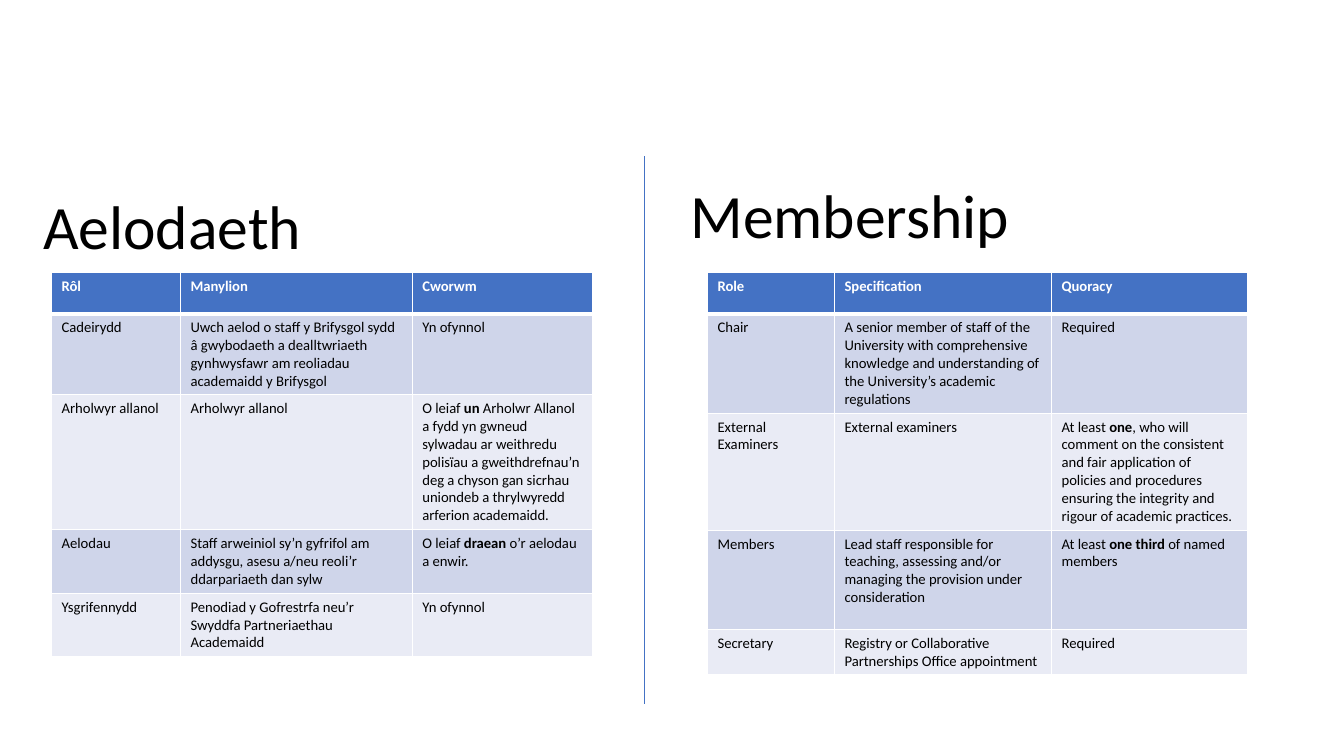
"""Build the bilingual membership slide with two role tables."""
from dataclasses import dataclass

from lxml.etree import SubElement
from pptx import Presentation
from pptx.dml.color import RGBColor
from pptx.enum.shapes import MSO_CONNECTOR
from pptx.enum.text import MSO_ANCHOR
from pptx.oxml.ns import qn
from pptx.slide import Slide
from pptx.table import _Cell
from pptx.text.text import _Paragraph
from pptx.util import Cm, Pt

COLORS = {
    "text": "000000",
    "white": "FFFFFF",
    "blue": "4472C4",
    "band_dark": "CFD5EA",
    "band_light": "E9EBF5",
}
TITLE_FORMAT = {"name": "Calibri", "size": Pt(44), "bold": False}
TABLE_FORMAT = {"name": "Calibri", "size": Pt(10.5)}
FRAME_FORMAT = {"word_wrap": True, "vertical_anchor": MSO_ANCHOR.MIDDLE}
TABLE_TOP = 6.87


@dataclass(frozen=True)
class Panel:
    """One language half: a title above a role table, with lengths in cm."""

    title: str
    title_left: float
    title_top: float
    table_left: float
    columns: tuple[float, ...]
    heights: tuple[float, ...]
    rows: tuple[tuple[str, str, str], ...]


PANELS = (
    Panel(
        "Aelodaeth", 0.84, 3.94, 1.3,
        (3.25, 5.84, 4.55), (1.04, 2.04, 3.4, 1.6, 1.6),
        (
            ("Rôl", "Manylion", "Cworwm"),
            ("Cadeirydd",
             "Uwch aelod o staff y Brifysgol sydd â gwybodaeth a dealltwriaeth "
             "gynhwysfawr am reoliadau academaidd y Brifysgol",
             "Yn ofynnol"),
            ("Arholwyr allanol", "Arholwyr allanol",
             "O leiaf *un* Arholwr Allanol a fydd yn gwneud sylwadau ar weithredu "
             "polisïau a gweithdrefnau’n deg a chyson gan sicrhau uniondeb a "
             "thrylwyredd arferion academaidd."),
            ("Aelodau",
             "Staff arweiniol sy’n gyfrifol am addysgu, asesu a/neu reoli’r "
             "ddarpariaeth dan sylw",
             "O leiaf *draean *o’r aelodau a enwir."),
            ("Ysgrifennydd",
             "Penodiad y Gofrestrfa neu’r Swyddfa Partneriaethau Academaidd",
             "Yn ofynnol"),
        ),
    ),
    Panel(
        "Membership", 17.15, 3.66, 17.83,
        (3.2, 5.47, 4.95), (1.04, 2.5, 2.95, 2.5, 1.15),
        (
            ("Role", "Specification", "Quoracy"),
            ("Chair",
             "A senior member of staff of the University with comprehensive "
             "knowledge and understanding of the University’s academic regulations",
             "Required"),
            ("External Examiners", "External examiners",
             "At least *one*, who will comment on the consistent and fair "
             "application of policies and procedures ensuring the integrity and "
             "rigour of academic practices."),
            ("Members",
             "Lead staff responsible for teaching, assessing and/or managing the "
             "provision under consideration",
             "At least *one third *of named members"),
            ("Secretary",
             "Registry or Collaborative Partnerships Office appointment",
             "Required"),
        ),
    ),
)


def apply_format(target: object, values: dict[str, object]) -> None:
    """Set each named attribute on the target."""
    for name, value in values.items():
        setattr(target, name, value)


def add_span(para: _Paragraph, text: str, values: dict[str, object], color: str) -> None:
    """Append one formatted run."""
    span = para.add_run()
    span.text = text
    apply_format(span.font, values)
    span.font.color.rgb = RGBColor.from_string(COLORS[color])


def add_border(cell: _Cell, side: str, width: float) -> None:
    """Draw a white border on one side of a cell."""
    properties = cell._tc.get_or_add_tcPr()
    line = SubElement(properties, qn(f"a:ln{side}"), w=str(Pt(width)))
    fill = SubElement(line, qn("a:solidFill"))
    SubElement(fill, qn("a:srgbClr"), val=COLORS["white"])


def fill_cell(cell: _Cell, text: str, row: int) -> None:
    """Write a cell, with asterisks enclosing its bold words."""
    header = row == 0
    para = cell.text_frame.paragraphs[0]
    for index, part in enumerate(text.split("*")):
        values = TABLE_FORMAT | {"bold": header or index % 2 == 1}
        add_span(para, part, values, "white" if header else "text")
    for side in "LRTB":
        thick = (header and side == "B") or (row == 1 and side == "T")
        add_border(cell, side, 3 if thick else 1)
    band = "blue" if header else ("band_light", "band_dark")[row % 2]
    cell.fill.solid()
    cell.fill.fore_color.rgb = RGBColor.from_string(COLORS[band])


def add_title(page: Slide, panel: Panel) -> None:
    """Add the title of a panel."""
    box = page.shapes.add_textbox(
        Cm(panel.title_left), Cm(panel.title_top), Cm(13.82), Cm(3.68))
    apply_format(box.text_frame, FRAME_FORMAT)
    para = box.text_frame.paragraphs[0]
    para.line_spacing = 0.9
    add_span(para, panel.title, TITLE_FORMAT, "text")


def add_role_table(page: Slide, panel: Panel) -> None:
    """Add the role table of a panel."""
    table = page.shapes.add_table(
        len(panel.rows), len(panel.columns), Cm(panel.table_left), Cm(TABLE_TOP),
        Cm(sum(panel.columns)), Cm(sum(panel.heights))).table
    for column, width in zip(table.columns, panel.columns):
        column.width = Cm(width)
    for index, (height, texts) in enumerate(zip(panel.heights, panel.rows)):
        table.rows[index].height = Cm(height)
        for cell, text in zip(table.rows[index].cells, texts):
            fill_cell(cell, text, index)


def add_divider(page: Slide) -> None:
    """Add the vertical line between the panels."""
    divider = page.shapes.add_connector(
        MSO_CONNECTOR.STRAIGHT, Cm(16.23), Cm(3.94), Cm(16.23), Cm(17.73))
    divider.line.color.rgb = RGBColor.from_string(COLORS["blue"])
    divider.line.width = Pt(0.5)
    SubElement(divider._element.spPr, qn("a:effectLst"))


def main() -> None:
    """Build and save the deck."""
    deck = Presentation()
    apply_format(deck, {"slide_width": Cm(33.87), "slide_height": Cm(19.05)})
    page = deck.slides.add_slide(deck.slide_layouts[6])
    for panel in PANELS:
        add_title(page, panel)
        add_role_table(page, panel)
    add_divider(page)
    deck.save("out.pptx")


if __name__ == "__main__":
    main()
